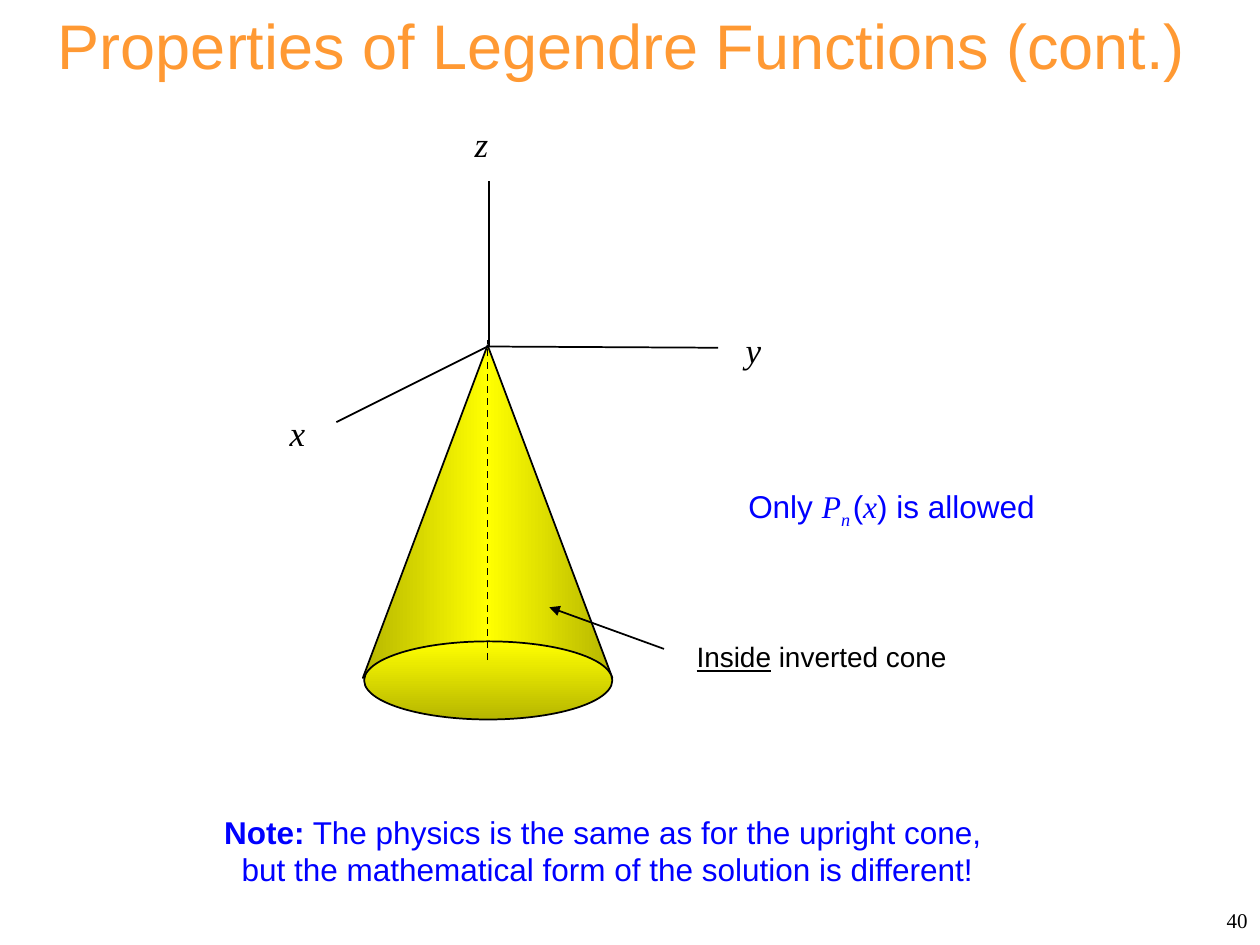
import pptx
import pptx.util
import pptx.dml.color
import pptx.enum.dml
import pptx.enum.shapes
import pptx.enum.text
import pptx.oxml
import pptx.oxml.ns
import lxml.etree

Inches = pptx.util.Inches
Align = pptx.enum.text.PP_ALIGN
Anchor = pptx.enum.text.MSO_ANCHOR
Preset = pptx.enum.shapes.MSO_SHAPE

COLORS = {"title": "FF9933", "note": "0000FF", "ink": "000000", "paper": "FFFFFF", "cone": "FFFF00"}
SANS, SERIF = "Arial", "Times New Roman"
MATH = {"font": SERIF, "italic": True}


def color(name):
    return pptx.dml.color.RGBColor.from_string(COLORS[name])


def place(shape, box):
    shape.left, shape.top, shape.width, shape.height = (Inches(value) for value in box)


def write_text(shape, *paragraphs, size=18, font=SANS, fill="ink", align=Align.LEFT,
               anchor=Anchor.TOP, wrap=True, italic=False):
    frame = shape.text_frame
    frame.word_wrap = wrap
    frame.vertical_anchor = anchor
    frame.auto_size = pptx.enum.text.MSO_AUTO_SIZE.NONE
    for index, runs in enumerate(paragraphs):
        paragraph = frame.add_paragraph() if index else frame.paragraphs[0]
        paragraph.alignment = align
        for text, style in runs:
            run = paragraph.add_run()
            run.text = text
            run.font.name = style.get("font", font)
            run.font.size = pptx.util.Pt(style.get("size", size))
            run.font.color.rgb = color(fill)
            run.font.bold = style.get("bold", False)
            run.font.italic = style.get("italic", italic)
            run.font.underline = style.get("underline", False)
            if "baseline" in style:
                run.font._element.set("baseline", str(style["baseline"] * 1000))


def add_text(slide, box, *paragraphs, **style):
    shape = slide.shapes.add_textbox(*(Inches(value) for value in box))
    write_text(shape, *paragraphs, **style)
    return shape


def add_line(slide, start, end, dashed=False, arrow=False):
    line = slide.shapes.add_connector(
        pptx.enum.shapes.MSO_CONNECTOR.STRAIGHT, *(Inches(value) for value in start + end))
    line.line.color.rgb = color("ink")
    line.line.width = pptx.util.Pt(1)
    if dashed:
        line.line.dash_style = pptx.enum.dml.MSO_LINE.DASH
    if arrow:
        tail = lxml.etree.SubElement(line.line._get_or_add_ln(), pptx.oxml.ns.qn("a:tailEnd"))
        tail.set("type", "triangle")
    lxml.etree.SubElement(line._element.spPr, pptx.oxml.ns.qn("a:effectLst"))


def add_shaded_shape(slide, preset, box, stops, angle):
    shape = slide.shapes.add_shape(preset, *(Inches(value) for value in box))
    shape.shadow.inherit = False
    shape.line.color.rgb = color("ink")
    shape.line.width = pptx.util.Pt(1)
    stop_xml = "".join(
        f'<a:gs pos="{position * 1000}"><a:srgbClr val="{COLORS["cone"]}">'
        f'{"<a:shade val=%s/>" % chr(34).join(["", "46275", ""]) if dark else ""}</a:srgbClr></a:gs>'
        for position, dark in stops)
    gradient = pptx.oxml.parse_xml(
        f'<a:gradFill {pptx.oxml.ns.nsdecls("a")} rotWithShape="1"><a:gsLst>{stop_xml}</a:gsLst>'
        f'<a:lin ang="{angle * 60000}" scaled="1"/></a:gradFill>')
    shape._element.spPr.find(pptx.oxml.ns.qn("a:prstGeom")).addnext(gradient)
    return shape


def add_title(slide, box):
    place(slide.shapes.title, box)
    write_text(slide.shapes.title, [("Properties of Legendre Functions (cont.)", {})],
               size=36, fill="title", align=Align.CENTER)


def add_cone(slide, box):
    left, top, width, height = box
    base_height = 0.62
    side_height = height - base_height / 2 - 0.02
    add_shaded_shape(slide, Preset.ISOSCELES_TRIANGLE, (left, top, width, side_height),
                     [(0, True), (50, False), (100, True)], 0)
    base = add_shaded_shape(slide, Preset.OVAL,
                            (left + 0.01, top + height - base_height, width - 0.01, base_height),
                            [(0, True), (100, False)], 90)
    base._element.spPr.find(pptx.oxml.ns.qn("a:xfrm")).set("flipV", "1")
    center = left + width / 2
    add_line(slide, (center, top + 2.5), (center, top - 0.04), dashed=True)


def add_axes(slide, box):
    left, top, width, height = box
    origin = (left + 1.67, top + 1.83)
    x, y = origin
    add_line(slide, origin, (x + 1.83, y + 0.01))
    add_line(slide, origin, (x - 1.2, y + 0.6))
    add_line(slide, (x + 0.01, y), (x + 0.01, y - 1.31))
    labels = [
        ("y", (left + width - 0.61, top + 1.64, 0.61, 0.43), Align.LEFT),
        ("x", (left, top + height - 0.43, 0.37, 0.43), Align.LEFT),
        ("z ", (left + 1.43, top, 0.45, 0.43), Align.CENTER),
    ]
    for name, label_box, align in labels:
        add_text(slide, label_box, [(name, {})], size=20, font=SERIF, italic=True, align=align)


def add_cone_label(slide, box):
    left, top = box[:2]
    label = add_text(slide, box, [("Inside", {"underline": True}), (" inverted cone", {})],
                     size=16, wrap=False)
    label.fill.solid()
    label.fill.fore_color.rgb = color("paper")
    add_line(slide, (left - 0.16, top + 0.12), (left - 1.07, top - 0.21), arrow=True)


def add_solution(slide, box):
    add_text(slide, box, [
        ("Only ", {}), ("P", MATH), ("n", {**MATH, "baseline": -25}), (" ", {**MATH, "size": 6}),
        ("(", {}), ("x", MATH), (") is allowed", {}),
    ], fill="note", wrap=False)


def add_note(slide, box):
    add_text(slide, box,
             [("Note:", {"bold": True}), (" The physics is the same as for the upright cone,", {})],
             [(" but the mathematical form of the solution is different!", {})],
             fill="note", align=Align.CENTER, wrap=False)


def add_page_number(slide, box):
    add_text(slide, box, [("40", {})], size=12, font=SERIF, align=Align.RIGHT, anchor=Anchor.MIDDLE)


def main():
    presentation = pptx.Presentation()
    presentation.slide_width = Inches(10)
    presentation.slide_height = Inches(7.5)
    slide = presentation.slides.add_slide(presentation.slide_layouts[5])
    add_title(slide, (0.27, 0, 9.33, 0.7))
    add_page_number(slide, (7.67, 7.1, 2.33, 0.4))
    add_cone(slide, (2.88, 2.74, 1.98, 2.97))
    add_axes(slide, (2.2, 0.92, 4.23, 2.73))
    add_cone_label(slide, (5.43, 5.03, 2.21, 0.37))
    add_solution(slide, (5.84, 3.82, 2.55, 0.4))
    add_note(slide, (1.67, 6.4, 6.23, 0.71))
    presentation.save("out.pptx")


if __name__ == "__main__":
    main()
